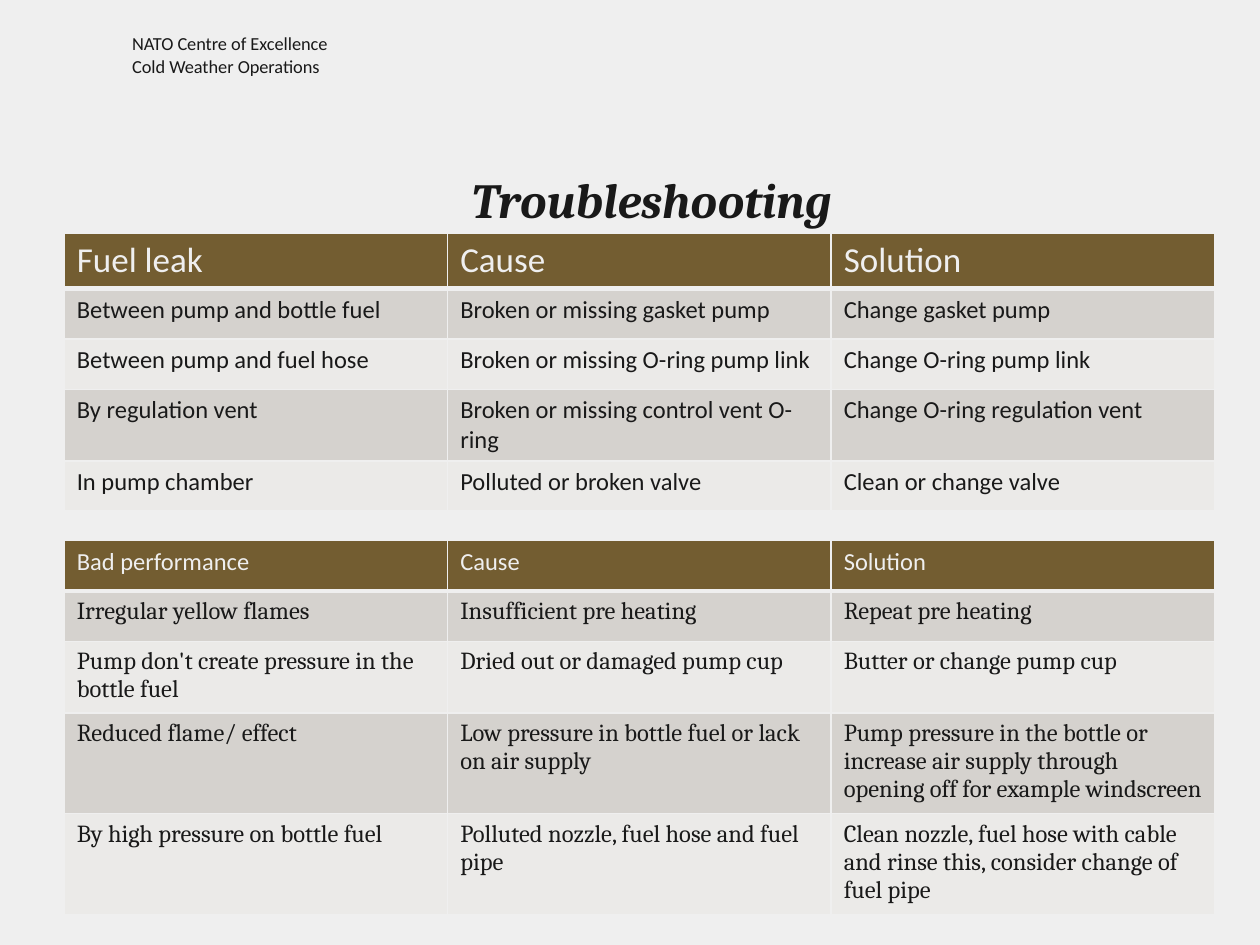
"""Build the stove troubleshooting slide with its fuel leak and performance tables."""
from lxml import etree
from pptx import Presentation
from pptx.dml.color import RGBColor
from pptx.enum.text import MSO_ANCHOR, PP_ALIGN
from pptx.oxml.ns import qn
from pptx.util import Inches, Pt

BOTTOM = MSO_ANCHOR.BOTTOM
CENTER = PP_ALIGN.CENTER

THEME = {
    "paper": "EFEFEF", "ink": "191919", "header": "735D31",
    "bands": ("D5D2CE", "EBEAE8"),
    "sans": "Calibri", "serif": "Cambria",
    "title": 28, "large": 20, "body": 14, "small": 10.5,
}


def write(paragraph, text, **formats):
    run = paragraph.add_run()
    run.text = text
    run.font.color.rgb = RGBColor.from_string(formats.pop("color"))
    for name, value in formats.items():
        setattr(run.font, name, value)


def add_border(cell, side, width):
    border = etree.SubElement(cell._tc.get_or_add_tcPr(), qn(f"a:ln{side}"), w=str(Pt(width)))
    fill = etree.SubElement(border, qn("a:solidFill"))
    etree.SubElement(fill, qn("a:srgbClr"), val=THEME["paper"])


TABLES = [
    {
        "top": 1.85, "header_size": THEME["large"], "header_height": 0.44, "font": THEME["sans"],
        "rows": [
            ("Fuel leak", "Cause", "Solution"),
            ("Between pump and bottle fuel", "Broken or missing gasket pump", "Change gasket pump"),
            ("Between pump and fuel hose", "Broken or missing O-ring pump link",
             "Change O-ring pump link"),
            ("By regulation vent", "Broken or missing control vent O-ring",
             "Change O-ring regulation vent"),
            ("In pump chamber", "Polluted or broken valve", "Clean or change valve"),
        ],
    },
    {
        "top": 4.29, "header_size": THEME["body"], "header_height": 0.4, "font": THEME["serif"],
        "rows": [
            ("Bad performance", "Cause", "Solution"),
            ("Irregular yellow flames", "Insufficient pre heating", "Repeat pre heating"),
            ("Pump don't create pressure in the bottle fuel", "Dried out or damaged pump cup",
             "Butter or change pump cup"),
            ("Reduced flame/ effect", "Low pressure in bottle fuel or lack on air supply",
             "Pump pressure in the bottle or increase air supply through opening off "
             "for example windscreen"),
            ("By high pressure on bottle fuel", "Polluted nozzle, fuel hose and fuel pipe",
             "Clean nozzle, fuel hose with cable and rinse this, consider change of fuel pipe"),
        ],
    },
]
ROW_HEIGHT = 0.4

deck = Presentation()
deck.slide_width, deck.slide_height = Inches(10), Inches(7.5)
slide = deck.slides.add_slide(deck.slide_layouts[6])
slide.background.fill.solid()
slide.background.fill.fore_color.rgb = RGBColor.from_string(THEME["paper"])

centre_name = slide.shapes.add_textbox(Inches(0.95), Inches(0.21), Inches(2.7), Inches(0.45)).text_frame
centre_name.word_wrap = True
for index, line in enumerate(("NATO Centre of Excellence", "Cold Weather Operations")):
    paragraph = centre_name.add_paragraph() if index else centre_name.paragraphs[0]
    write(paragraph, line, color=THEME["ink"], name=THEME["sans"], size=Pt(THEME["small"]))

heading = slide.shapes.add_textbox(Inches(0.7), Inches(1.1), Inches(8.94), Inches(0.76)).text_frame
heading.word_wrap = True
heading.vertical_anchor = BOTTOM
heading.paragraphs[0].alignment = CENTER
write(heading.paragraphs[0], "Troubleshooting", color=THEME["ink"], name=THEME["serif"],
      size=Pt(THEME["title"]), bold=True, italic=True)

for faults in TABLES:
    rows = faults["rows"]
    height = faults["header_height"] + ROW_HEIGHT * (len(rows) - 1)
    grid = slide.shapes.add_table(len(rows), len(rows[0]), Inches(0.51), Inches(faults["top"]),
                                  Inches(9.13), Inches(height)).table
    for row_index, texts in enumerate(rows):
        is_header = row_index == 0
        grid.rows[row_index].height = Inches(faults["header_height"] if is_header else ROW_HEIGHT)
        background = THEME["header"] if is_header else THEME["bands"][(row_index - 1) % 2]
        formats = {
            "color": THEME["paper"] if is_header else THEME["ink"],
            "name": THEME["sans"] if is_header else faults["font"],
            "size": Pt(faults["header_size"] if is_header else THEME["body"]),
            "bold": False,
        }
        for column, text in enumerate(texts):
            cell = grid.cell(row_index, column)
            for side in "LRTB":
                add_border(cell, side, 3 if is_header and side == "B" else 1)
            cell.fill.solid()
            cell.fill.fore_color.rgb = RGBColor.from_string(background)
            write(cell.text_frame.paragraphs[0], text, **formats)

deck.save("out.pptx")
